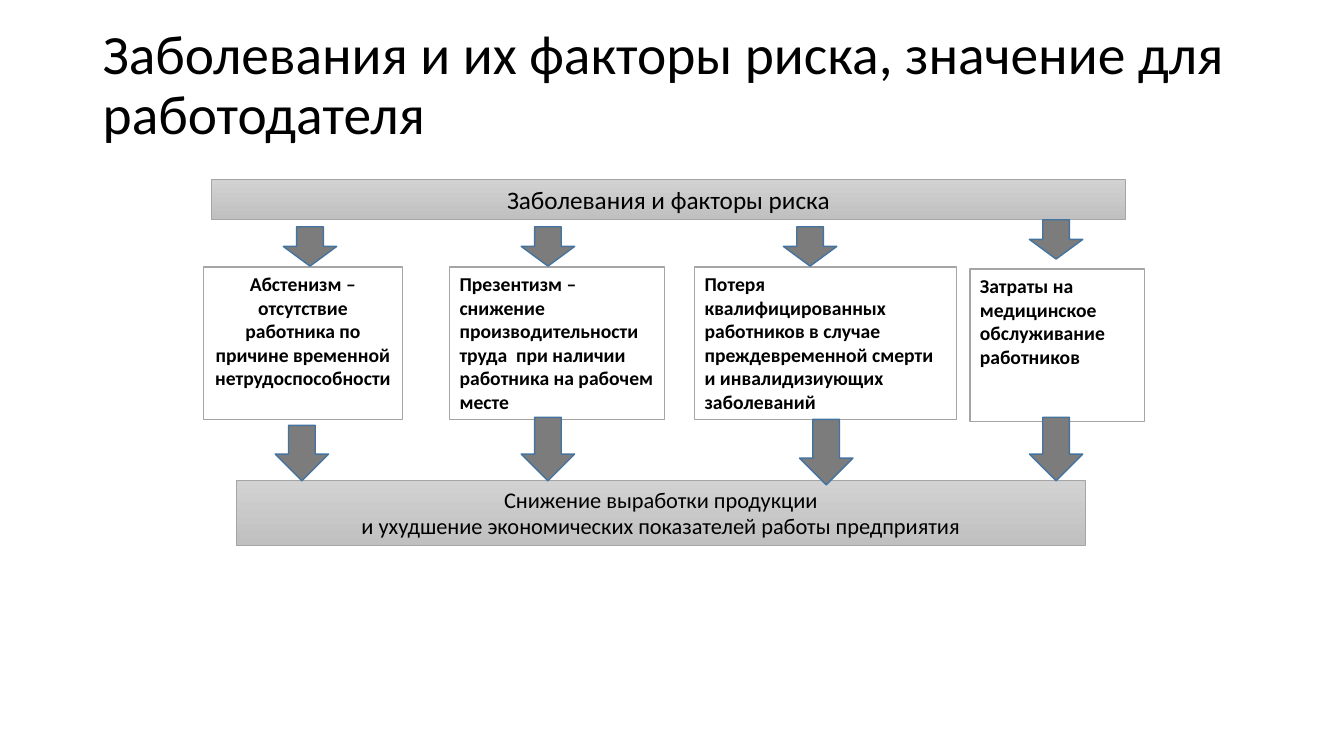
from pptx import Presentation
from pptx.dml.color import RGBColor
from pptx.enum.shapes import MSO_SHAPE as SHAPE
from pptx.enum.text import MSO_ANCHOR as ANCHOR, PP_ALIGN as ALIGN
from pptx.util import Inches, Pt


def rgb(hex_string):
    return RGBColor.from_string(hex_string)


def write(frame, lines, size, bold=False, align=ALIGN.LEFT, anchor=ANCHOR.TOP):
    frame.word_wrap = True
    frame.vertical_anchor = anchor
    frame.text = "\n".join(lines)
    for paragraph in frame.paragraphs:
        paragraph.alignment = align
        paragraph.font.name = "Calibri"
        paragraph.font.size = Pt(size)
        paragraph.font.bold = bold
        paragraph.font.color.rgb = rgb("000000")


presentation = Presentation()
presentation.slide_width = Inches(13.33)
presentation.slide_height = Inches(7.5)
slide = presentation.slides.add_slide(presentation.slide_layouts[6])
shapes = slide.shapes

# Title
title = shapes.add_textbox(Inches(0.92), Inches(0.4), Inches(11.5), Inches(0.92))
write(title.text_frame, ["Заболевания и их факторы риска, значение для работодателя"],
      39.6, anchor=ANCHOR.MIDDLE)
title.text_frame.paragraphs[0].line_spacing = 0.9

# Cause and outcome bars
bars = [
    (2.1, 1.78, 9.06, 0.4, 18, ["Заболевания и факторы риска"]),
    (2.34, 4.77, 8.43, 0.64, 16,
     ["Снижение выработки продукции",
      "и ухудшение экономических показателей работы предприятия"]),
]
for left, top, width, height, size, lines in bars:
    bar = shapes.add_shape(SHAPE.RECTANGLE, Inches(left), Inches(top),
                           Inches(width), Inches(height))
    bar.shadow.inherit = False
    bar.fill.gradient()
    bar.fill.gradient_angle = 270
    for stop, color in zip(bar.fill.gradient_stops, ("D2D2D2", "C0C0C0")):
        stop.color.rgb = rgb(color)
        stop.position = 0 if color == "D2D2D2" else 1
    bar.line.color.rgb = rgb("A5A5A5")
    bar.line.width = Pt(0.5)
    write(bar.text_frame, lines, size, align=ALIGN.CENTER)

# Losses for the employer
losses = [
    (2.02, 2.65, 1.97, ALIGN.CENTER,
     ["Абстенизм – отсутствие",
      "работника по причине временной нетрудоспособности"]),
    (4.46, 2.65, 2.13, ALIGN.LEFT,
     ["Презентизм – снижение производительности труда  при наличии "
      "работника на рабочем месте"]),
    (6.89, 2.65, 2.6, ALIGN.LEFT,
     ["Потеря квалифицированных работников в случае преждевременной "
      "смерти и инвалидизиующих заболеваний"]),
    (9.62, 2.67, 1.73, ALIGN.LEFT,
     ["Затраты на медицинское обслуживание работников"]),
]
for left, top, width, align, lines in losses:
    loss = shapes.add_shape(SHAPE.RECTANGLE, Inches(left), Inches(top),
                            Inches(width), Inches(1.51))
    loss.shadow.inherit = False
    loss.fill.solid()
    loss.fill.fore_color.rgb = rgb("FFFFFF")
    loss.line.color.rgb = rgb("A5A5A5")
    loss.line.width = Pt(1)
    write(loss.text_frame, lines, 14, bold=True, align=align)

# Arrows into and out of the losses: left, top, height
arrows = [
    (2.81, 2.25, 0.39), (5.17, 2.25, 0.39), (7.77, 2.25, 0.39), (10.21, 2.18, 0.39),
    (2.73, 4.22, 0.55), (5.17, 4.14, 0.63), (7.93, 4.16, 0.65), (10.21, 4.14, 0.63),
]
for left, top, height in arrows:
    arrow = shapes.add_shape(SHAPE.DOWN_ARROW, Inches(left), Inches(top),
                             Inches(0.53), Inches(height))
    arrow.shadow.inherit = False
    arrow.fill.solid()
    arrow.fill.fore_color.rgb = rgb("7C7C7C")
    arrow.line.color.rgb = rgb("43739E")
    arrow.line.width = Pt(1)

presentation.save("out.pptx")
